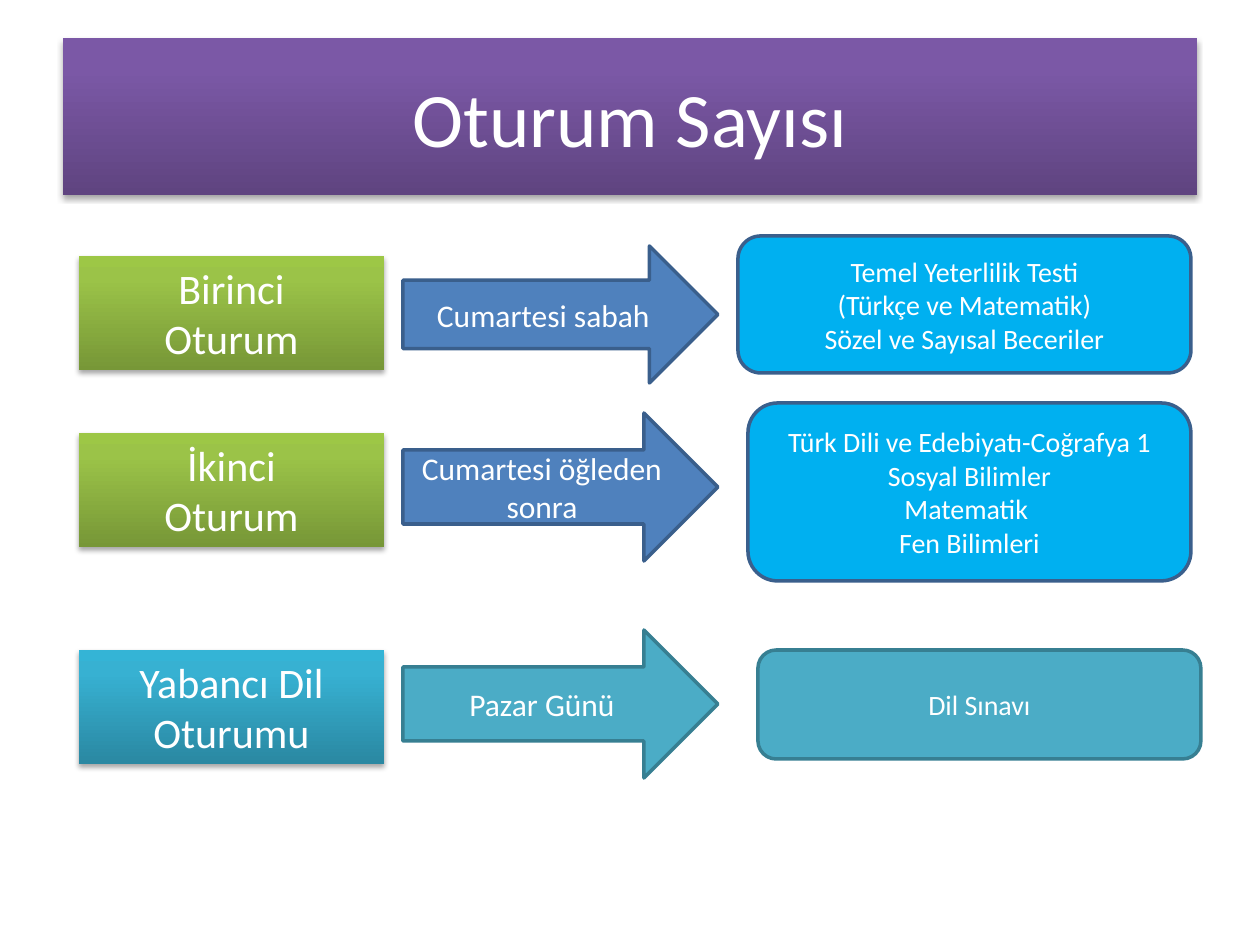
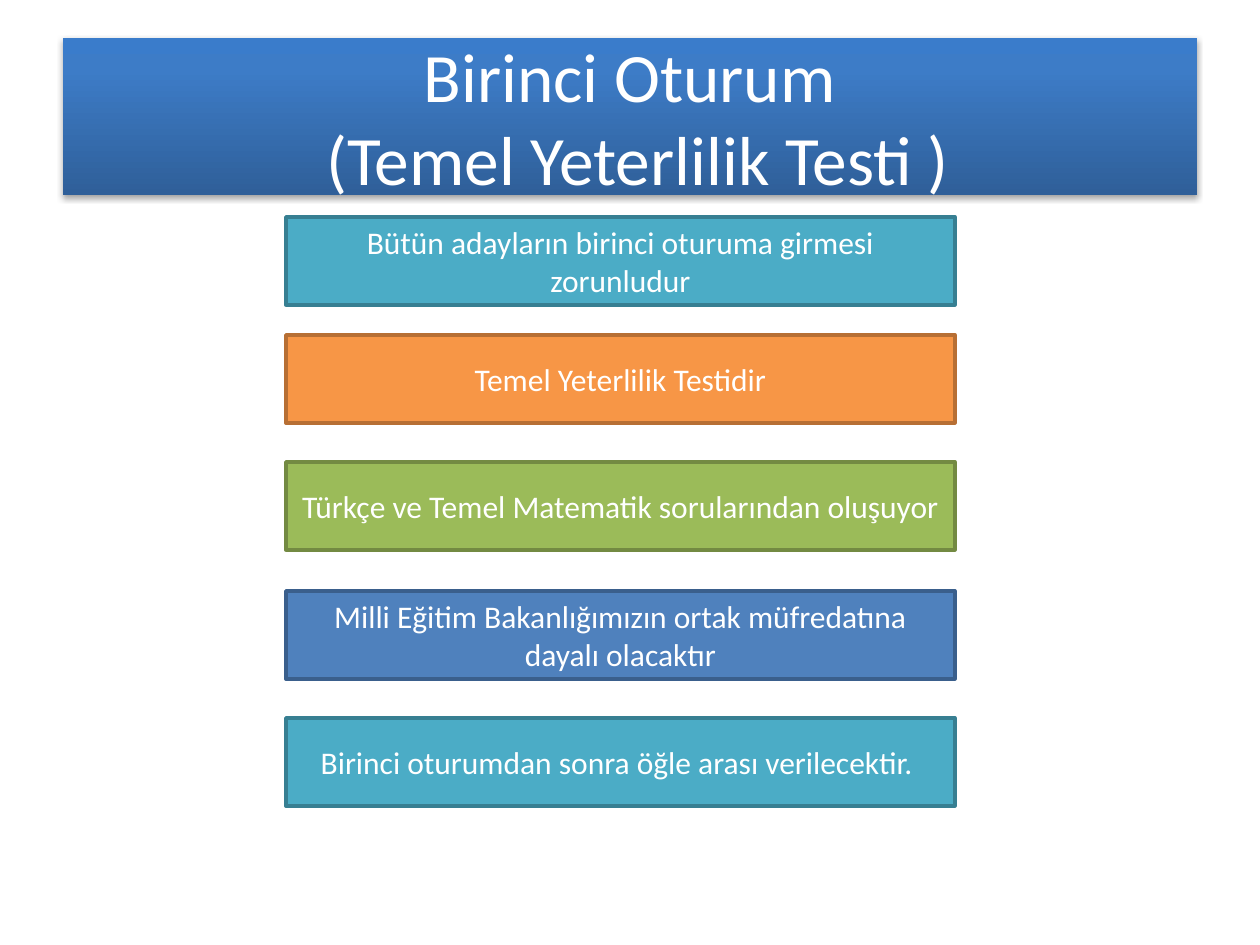
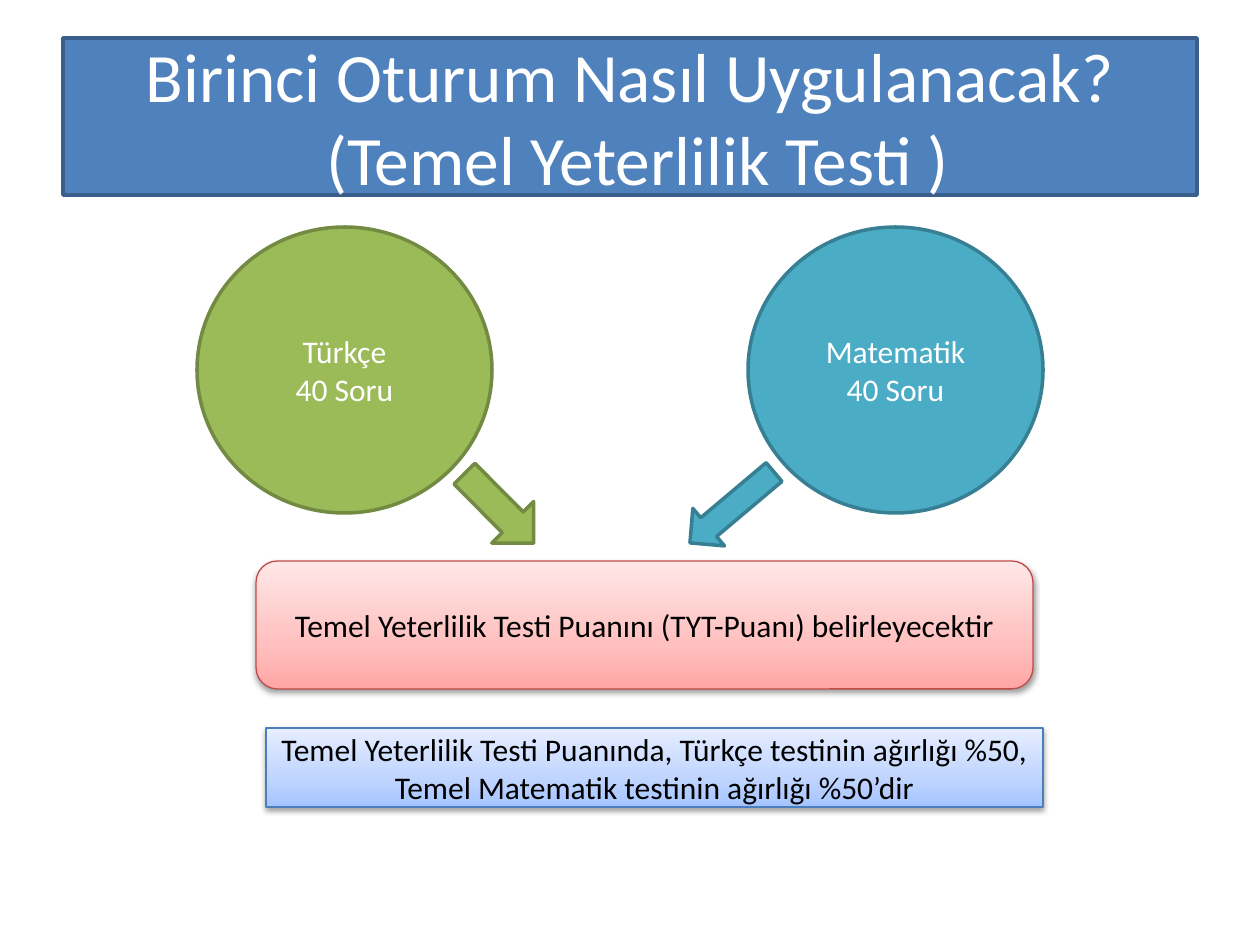
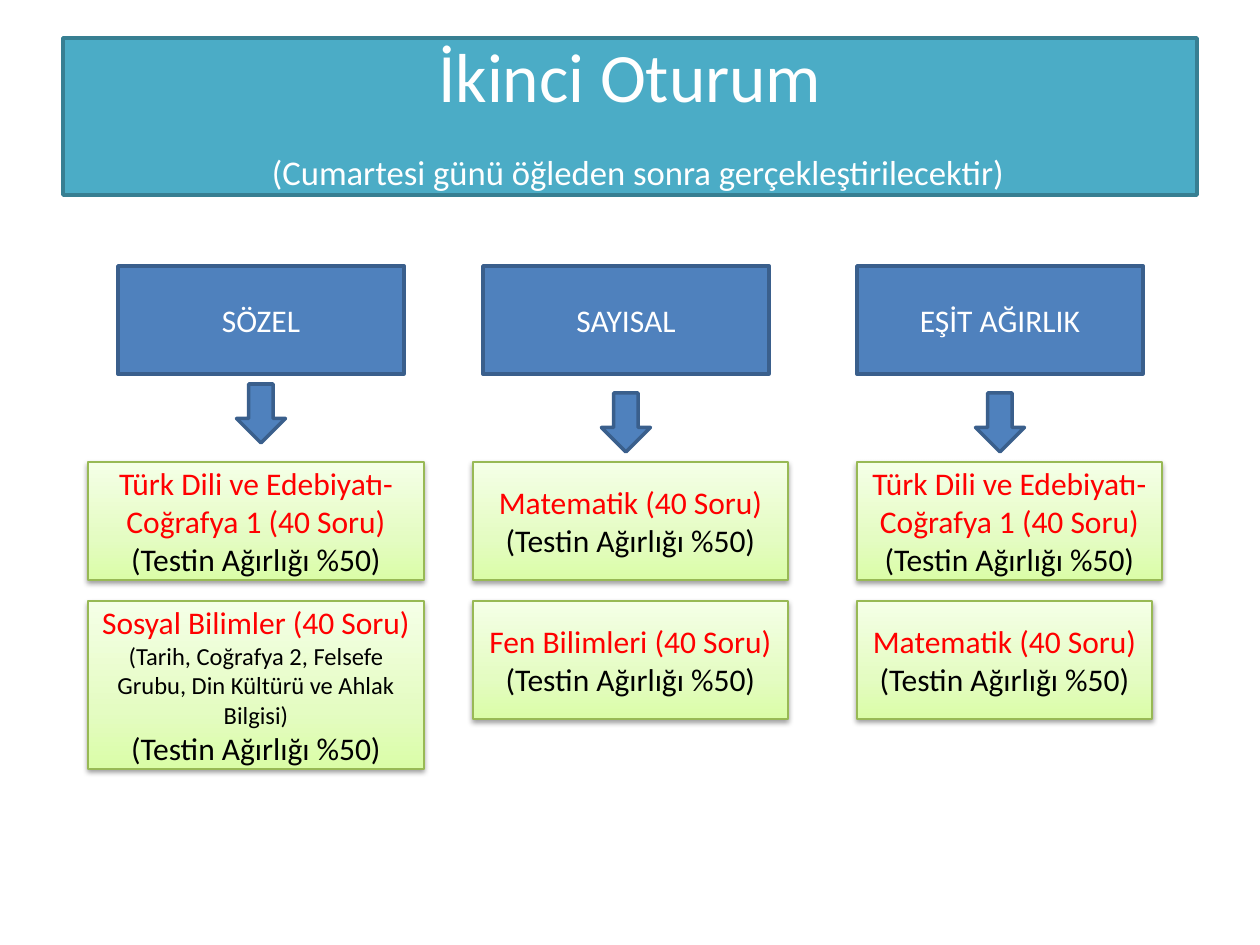
from dataclasses import dataclass

from pptx import Presentation
from pptx import util as u
from pptx.dml.color import RGBColor
from pptx.enum import shapes, text
from pptx.oxml.ns import qn
from lxml import etree

PX = 914400 / 126
KIND = shapes.MSO_SHAPE


@dataclass(frozen=True)
class Style:
    fill: object
    line: str = None
    weight: float = 2
    ink: str = "FFFFFF"
    shadow: tuple = None


class Theme:
    font = "Calibri"
    title, title_two_lines, subtitle = 44, 39.6, 19.8
    label, body, detail, note = 24, 18, 16, 14
    black, red = "000000", "FF0000"
    deep = (35, 1.8)
    soft = (38, 1.6)
    styles = {
        "blue": Style("4F81BD", "3A5F8C"),
        "sky": Style("00B0F0", "3A5F8C"),
        "teal": Style("4BACC6", "377F92"),
        "green": Style("9BBB59", "738A42"),
        "orange": Style("F79646", "B76F34"),
        "purple glow": Style(((0, "5F4480"), (80, "7B58A6"), (100, "7C57A8")), shadow=deep),
        "blue glow": Style(((0, "2F5F99"), (80, "3D7CC7"), (100, "3A7CCB")), shadow=deep),
        "green glow": Style(((0, "779737"), (80, "9BC348"), (100, "9DC746")), shadow=deep),
        "teal glow": Style(((0, "2A88A2"), (80, "37B1D2"), (100, "34B4D6")), shadow=deep),
        "pale red": Style(((0, "FFA6A5"), (35, "FFC0BF"), (100, "FFE7E7")),
                          "BF4C48", 0.75, black, soft),
        "pale blue": Style(((0, "A4C4FF"), (35, "BFD4FF"), (100, "E6EEFF")),
                           "4B7EBC", 0.75, black, soft),
        "pale green": Style(((0, "DAFDA7"), (35, "E4FCC2"), (100, "F5FFE7")),
                            "98B955", 0.75, black, soft),
    }


TITLE_BOX = (63, 38, 1134, 157)

SESSIONS = [
    dict(name=["Birinci", "Oturum"], when="Cumartesi sabah",
         tests=["Temel Yeterlilik Testi", "(Türkçe ve Matematik)", "Sözel ve Sayısal Beceriler"],
         styles=("green glow", "blue", "sky"),
         top=256, arrow=(246, 137), box=(738, 236, 453, 137)),
    dict(name=["İkinci", "Oturum"], when="Cumartesi öğleden sonra",
         tests=["Türk Dili ve Edebiyatı-Coğrafya 1", "Sosyal Bilimler", "Matematik ", "Fen Bilimleri"],
         styles=("green glow", "blue", "sky"),
         top=433, arrow=(413, 148), box=(748, 403, 443, 178)),
    dict(name=["Yabancı Dil", "Oturumu"], when="Pazar Günü", tests=["Dil Sınavı"],
         styles=("teal glow", "teal", "teal"),
         top=650, arrow=(630, 148), box=(758, 650, 443, 109)),
]

FACTS = [
    (217, "teal", "Bütün adayların birinci oturuma girmesi zorunludur"),
    (335, "orange", "Temel Yeterlilik Testidir"),
    (462, "green", "Türkçe ve Temel Matematik sorularından oluşuyor"),
    (591, "blue", "Milli Eğitim Bakanlığımızın ortak müfredatına dayalı olacaktır"),
    (718, "teal", "Birinci oturumdan sonra öğle arası verilecektir. "),
]

SUBJECTS = [
    ("Türkçe", "green", 197, (450, 479, 98, 59), 45.2),
    ("Matematik", "teal", 748, (677, 483, 110, 49), 139.9),
]
RESULTS = [
    (KIND.ROUNDED_RECTANGLE, "pale red", (256, 561, 777, 128),
     "Temel Yeterlilik Testi Puanını (TYT-Puanı) belirleyecektir"),
    (KIND.RECTANGLE, "pale blue", (266, 728, 777, 79),
     "Temel Yeterlilik Testi Puanında, Türkçe testinin ağırlığı %50, "
     "Temel Matematik testinin ağırlığı %50’dir"),
]

LITERATURE = "Türk Dili ve Edebiyatı-Coğrafya 1 (40 Soru)"
MATHS = "Matematik (40 Soru)"
WEIGHT = "(Testin Ağırlığı %50)"
SOCIAL_NOTE = "(Tarih, Coğrafya 2, Felsefe Grubu, Din Kültürü ve Ahlak Bilgisi)"
TRACKS = [
    dict(name="SÖZEL", left=118, arrow_top=384, card_left=88,
         cards=[(LITERATURE, None, 336, 118),
                ("Sosyal Bilimler (40 Soru)", SOCIAL_NOTE, 336, 168)]),
    dict(name="SAYISAL", left=483, arrow_top=393, card_left=473,
         cards=[(MATHS, None, 315, 118), ("Fen Bilimleri (40 Soru)", None, 315, 118)]),
    dict(name="EŞİT AĞIRLIK", left=857, arrow_top=393, card_left=857,
         cards=[(LITERATURE, None, 305, 118), (MATHS, None, 295, 118)]),
]


def px(*lengths):
    return [u.Emu(round(n * PX)) for n in lengths]


def sub(parent, tag, **attrs):
    return etree.SubElement(parent, qn(tag), {k: str(v) for k, v in attrs.items()})


def paint(sp, style):
    sp.shadow.inherit = False
    spPr = sp.element.spPr
    if isinstance(style.fill, str):
        sp.fill.solid()
        sp.fill.fore_color.rgb = RGBColor.from_string(style.fill)
    else:
        sp.fill.gradient()
        sp.fill.gradient_angle = 90
        stops = spPr.find(".//" + qn("a:gsLst"))
        for old in list(stops):
            stops.remove(old)
        for pos, color in style.fill:
            sub(sub(stops, "a:gs", pos=pos * 1000), "a:srgbClr", val=color)
    if style.line:
        sp.line.color.rgb = RGBColor.from_string(style.line)
        sp.line.width = u.Pt(style.weight)
    else:
        sp.line.fill.background()
    if style.shadow:
        alpha, dist = style.shadow
        shadow = sub(spPr.find(qn("a:effectLst")), "a:outerShdw", blurRad=u.Pt(3.1),
                     dist=u.Pt(dist), dir=5400000, rotWithShape=0)
        sub(sub(shadow, "a:srgbClr", val=Theme.black), "a:alpha", val=alpha * 1000)


def add_run(p, words, size, color):
    r = p.add_run()
    r.text = words
    r.font.name = Theme.font
    r.font.size = u.Pt(size)
    r.font.color.rgb = RGBColor.from_string(color)


def set_frame(tf, anchor=text.MSO_ANCHOR.MIDDLE):
    tf.word_wrap = True
    tf.auto_size = text.MSO_AUTO_SIZE.NONE
    tf.vertical_anchor = anchor


def write(sp, lines, anchor=text.MSO_ANCHOR.MIDDLE):
    tf = sp.text_frame
    set_frame(tf, anchor)
    for i, (words, size, color) in enumerate(lines):
        p = tf.paragraphs[0] if i == 0 else tf.add_paragraph()
        p.alignment = text.PP_ALIGN.CENTER
        add_run(p, words, size, color)


def add_block(s, kind, box, style_name, lines=(), size=Theme.body, **kw):
    style = Theme.styles[style_name]
    sp = s.shapes.add_shape(kind, *px(*box))
    paint(sp, style)
    if lines:
        write(sp, [(n, size, style.ink) if isinstance(n, str) else n for n in lines], **kw)
    return sp


def add_slide(prs, style_name, *title_lines):
    s = prs.slides.add_slide(prs.slide_layouts[5])
    sp = s.shapes.title
    sp.left, sp.top, sp.width, sp.height = px(*TITLE_BOX)
    style = Theme.styles[style_name]
    paint(sp, style)
    set_frame(sp.text_frame)
    p = sp.text_frame.paragraphs[0]
    p.alignment = text.PP_ALIGN.CENTER
    for i, runs in enumerate(title_lines):
        if i:
            p.add_line_break()
        for words, size in runs:
            add_run(p, words, size, style.ink)
    return s


def sessions_slide(prs):
    s = add_slide(prs, "purple glow", [("Oturum Sayısı", Theme.title)])
    for item in SESSIONS:
        name_style, arrow_style, box_style = item["styles"]
        arrow_top, arrow_height = item["arrow"]
        add_block(s, KIND.RECTANGLE, (79, item["top"], 305, 114), name_style,
                  item["name"], Theme.label, anchor=text.MSO_ANCHOR.TOP)
        add_block(s, KIND.RIGHT_ARROW, (403, arrow_top, 315, arrow_height),
                  arrow_style, [item["when"]])
        add_block(s, KIND.ROUNDED_RECTANGLE, item["box"], box_style,
                  item["tests"], Theme.detail)


def facts_slide(prs):
    size = Theme.title_two_lines
    s = add_slide(prs, "blue glow", [("Birinci Oturum", size)],
                  [(" (Temel Yeterlilik Testi )", size)])
    for top, style_name, words in FACTS:
        add_block(s, KIND.RECTANGLE, (286, top, 669, 88), style_name, [words])


def scoring_slide(prs):
    size = Theme.title_two_lines
    s = add_slide(prs, "blue", [("Birinci Oturum Nasıl Uygulanacak?", size)],
                  [(" (Temel Yeterlilik Testi )", size)])
    for name, style_name, left, arrow_box, angle in SUBJECTS:
        add_block(s, KIND.OVAL, (left, 227, 295, 286), style_name, [name, "40 Soru"])
        add_block(s, KIND.RIGHT_ARROW, arrow_box, style_name).rotation = angle
    for kind, style_name, box, words in RESULTS:
        add_block(s, kind, box, style_name, [words])


def tracks_slide(prs):
    size = Theme.title_two_lines
    s = add_slide(prs, "teal", [("İkinci Oturum", size)],
                  [(" ", size), ("(Cumartesi günü öğleden sonra gerçekleştirilecektir)", Theme.subtitle)])
    head_width, arrow_width = 286, 49
    for track in TRACKS:
        left = track["left"]
        add_block(s, KIND.RECTANGLE, (left, 266, head_width, 108), "blue", [track["name"]])
        add_block(s, KIND.DOWN_ARROW, (left + (head_width - arrow_width) / 2,
                                       track["arrow_top"], arrow_width, 59), "blue")
        for top, (test, note, width, height) in zip((462, 601), track["cards"]):
            lines = [(test, Theme.body, Theme.red)]
            if note:
                lines.append((note, Theme.note, Theme.black))
            add_block(s, KIND.RECTANGLE, (track["card_left"], top, width, height),
                      "pale green", lines + [WEIGHT])


def main():
    prs = Presentation()
    prs.slide_width, prs.slide_height = px(1260, 945)
    for build in (sessions_slide, facts_slide, scoring_slide, tracks_slide):
        build(prs)
    prs.save("out.pptx")


if __name__ == "__main__":
    main()
